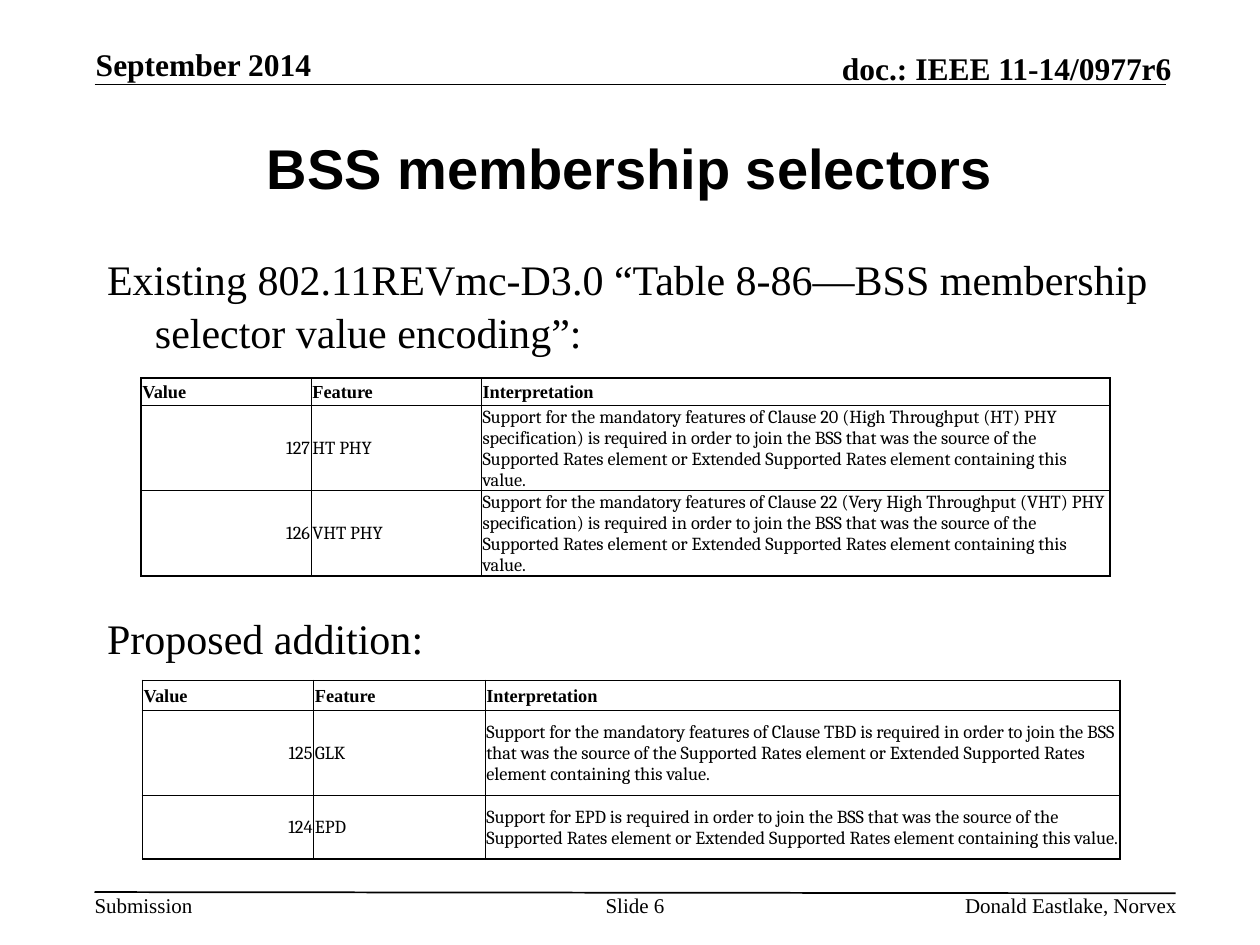
from lxml import etree
from pptx import Presentation
from pptx.dml.color import RGBColor
from pptx.enum.shapes import MSO_CONNECTOR as Link
from pptx.enum.text import MSO_ANCHOR as Anchor, MSO_AUTO_SIZE as Auto, PP_ALIGN as Align
from pptx.oxml.ns import qn
from pptx.util import Inches, Pt

THEME = {
    "ink": "000000", "serif": "Times New Roman", "sans": "Arial", "cell": "Cambria",
    "title": 32, "body": 24, "head": 18, "foot": 12, "table": 10.5,
}
INK = RGBColor.from_string(THEME["ink"])


def write(para, text, face, size, bold=False, align=Align.LEFT):
    para.alignment = align
    run = para.add_run()
    run.text = text
    look = {"name": THEME[face], "size": Pt(THEME[size]), "bold": bold}
    for key, val in look.items():
        setattr(run.font, key, val)
    run.font.color.rgb = INK


def place(shape, box, anchor, pad=(0, 0)):
    for key, val in zip(("left", "top", "width", "height"), box):
        setattr(shape, key, Inches(val))
    frame = shape.text_frame
    look = {"margin_left": Inches(pad[0]), "margin_right": Inches(pad[0]),
            "margin_top": Inches(pad[1]), "margin_bottom": Inches(pad[1]),
            "vertical_anchor": anchor, "word_wrap": True, "auto_size": Auto.NONE}
    for key, val in look.items():
        setattr(frame, key, val)
    return frame


deck = Presentation()
deck.slide_width, deck.slide_height = Inches(10), Inches(7.5)
slide = deck.slides.add_slide(deck.slide_layouts[1])
title, body = slide.placeholders

# Header and footer rules
for x1, y1, x2, y2 in [(0.75, 0.67, 9.25, 0.67), (0.75, 7.08, 9.33, 7.09)]:
    rule = slide.shapes.add_connector(
        Link.STRAIGHT, Inches(x1), Inches(y1), Inches(x2), Inches(y2))
    rule.line.color.rgb = INK
    rule.line.width = Pt(1)
    etree.SubElement(rule.element.spPr, qn("a:effectLst"))

# Header and footer text
LABELS = [
    ("September 2014", (0.76, 0.36, 2.05, 0.3), "head", Align.LEFT),
    ("doc.: IEEE 11-14/0977r6", (5.47, 0.39, 3.83, 0.3), "head", Align.RIGHT),
    ("Submission", (0.75, 7.08, 0.78, 0.2), "foot", Align.LEFT),
    ("Slide 6", (4.75, 7.08, 0.58, 0.4), "foot", Align.CENTER),
    ("Donald Eastlake, Norvex", (5.86, 7.08, 3.48, 0.2), "foot", Align.RIGHT),
]
for text, box, size, align in LABELS:
    label = slide.shapes.add_textbox(0, 0, 0, 0)
    top = size == "head"
    frame = place(label, box, Anchor.BOTTOM if top else Anchor.TOP)
    write(frame.paragraphs[0], text, "serif", size, top, align)

# Title and body; the second line leaves room for the first table
frame = place(title, (0.75, 0.75, 8.5, 1.16), Anchor.MIDDLE, (0.1, 0.05))
write(frame.paragraphs[0], "BSS membership selectors", "sans", "title", True, Align.CENTER)

frame = place(body, (0.75, 1.94, 8.5, 4.73), Anchor.TOP, (0.1, 0.05))
LINES = [
    ("Existing 802.11REVmc-D3.0 “Table 8-86—BSS membership selector value encoding”:", 6),
    ("Proposed addition:", 145),
]
for i, (text, gap) in enumerate(LINES):
    para = frame.add_paragraph() if i else frame.paragraphs[0]
    write(para, text, "serif", "body")
    para.space_before = Pt(gap)
    para.line_spacing = 1.05
    props = para._p.get_or_add_pPr()
    props.set("marL", str(Inches(0.38)))
    props.set("indent", str(Inches(-0.38)))
    etree.SubElement(props, qn("a:buNone"))

# Tables: a blank margin of cells surrounds each ruled grid
HEADS = ("Value", "Feature", "Interpretation")
START = "Support for the mandatory features of Clause "
JOIN = " is required in order to join the BSS that was the source of the "
RATES = "Supported Rates element or Extended Supported Rates element containing this value."
TABLES = [
    ((0.75, 2.78), (0.37, 1.35, 1.35, 4.99, 0.35), (0.22, 0.22, 0.65, 0.67, 0.22), [
        HEADS,
        ("127", "HT PHY",
         START + "20 (High Throughput (HT) PHY specification)" + JOIN + RATES),
        ("126", "VHT PHY",
         START + "22 (Very High Throughput (VHT) PHY specification)" + JOIN + RATES),
    ]),
    ((0.75, 5.16), (0.38, 1.36, 1.36, 5.04, 0.36), (0.24, 0.24, 0.67, 0.51, 0.23), [
        HEADS,
        ("125", "GLK", START + "TBD" + JOIN + RATES),
        ("124", "EPD", "Support for EPD" + JOIN + RATES),
    ]),
]
# Line weights by grid edge
DOWN = {1: 1, 2: 0.5, 3: 0.5, 4: 1}
ACROSS = {1: 1, 2: 1, 3: 0.5, 4: 1}
PLAIN = "{2D5ABB26-0587-4C30-8999-92F81FD0307C}"

for (left, top), cols, rows, data in TABLES:
    grid = slide.shapes.add_table(
        len(rows), len(cols), Inches(left), Inches(top),
        Inches(sum(cols)), Inches(sum(rows))).table
    grid.first_row = grid.horz_banding = False
    grid._tbl.tblPr.find(qn("a:tableStyleId")).text = PLAIN
    for col, size in zip(grid.columns, cols):
        col.width = Inches(size)
    for r, size in enumerate(rows):
        grid.rows[r].height = Inches(size)
        for c in range(len(cols)):
            cell = grid.cell(r, c)
            look = {"margin_left": Inches(0.01), "margin_right": Inches(0.01),
                    "margin_top": Inches(0.01), "margin_bottom": 0,
                    "vertical_anchor": Anchor.MIDDLE}
            for key, val in look.items():
                setattr(cell, key, val)

            # Text
            para = cell.text_frame.paragraphs[0]
            in_row, in_col = 1 <= r <= 3, 1 <= c <= 3
            if in_row and in_col:
                head = r == 1
                align = Align.RIGHT if c == 1 and not head else Align.LEFT
                write(para, data[r - 1][c - 1], "serif" if head else "cell",
                      "table", head, align)
            else:
                end = etree.SubElement(para._p, qn("a:endParaRPr"))
                end.set("sz", str(int(THEME["table"] * 100)))

            # Borders
            props = cell._tc.get_or_add_tcPr()
            edges = {"lnL": in_row and DOWN.get(c), "lnR": in_row and DOWN.get(c + 1),
                     "lnT": in_col and ACROSS.get(r), "lnB": in_col and ACROSS.get(r + 1)}
            for tag, weight in edges.items():
                if weight:
                    line = etree.SubElement(props, qn("a:" + tag), w=str(Pt(weight)))
                    fill = etree.SubElement(line, qn("a:solidFill"))
                    etree.SubElement(fill, qn("a:srgbClr"), val=THEME["ink"])
            cell.fill.background()

deck.save("out.pptx")
